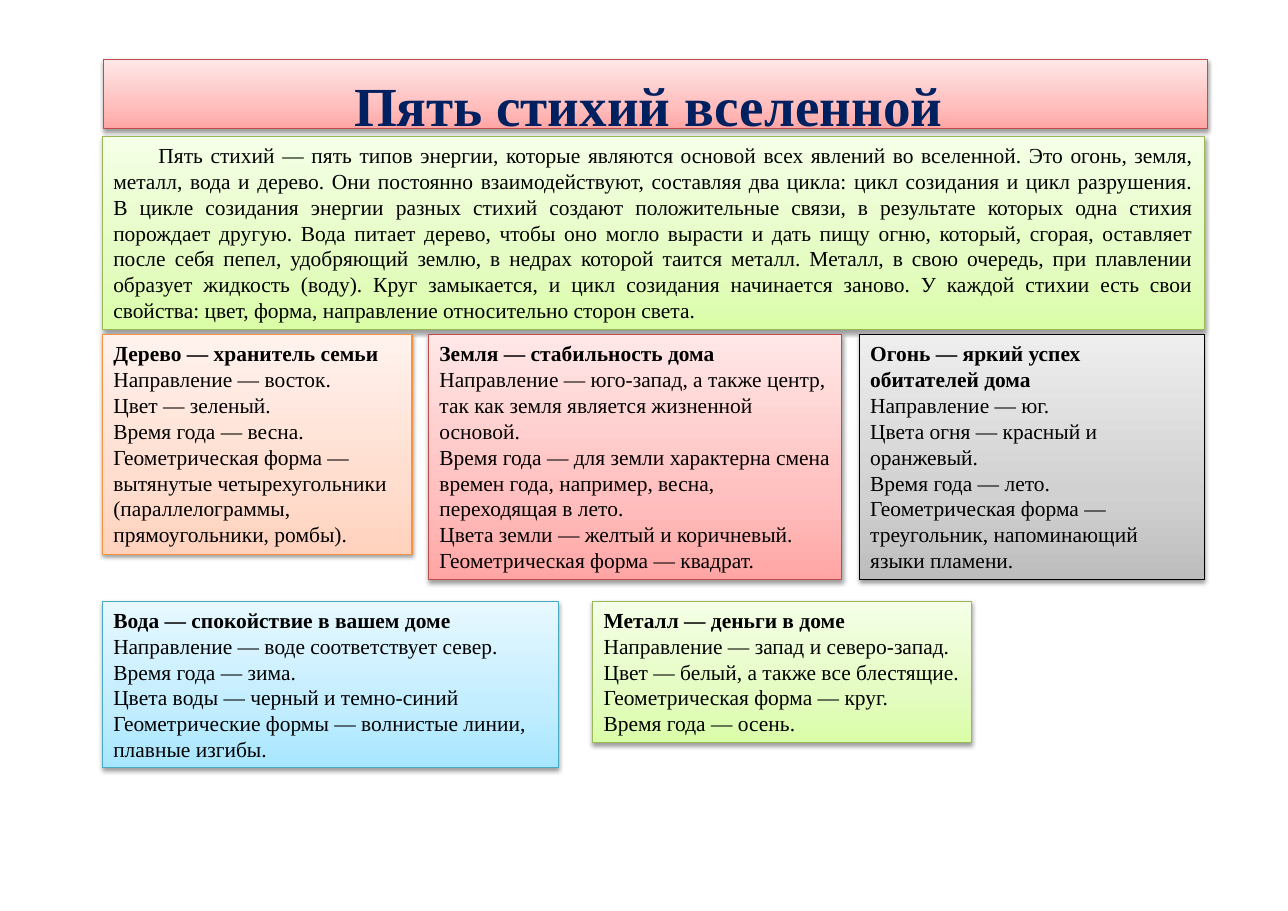
from copy import deepcopy

from lxml import etree
from pptx import Presentation
from pptx import util as u
from pptx.dml.color import RGBColor
from pptx.enum import shapes, text
from pptx.oxml.ns import qn

# Grid: square cells of 0.1 inch, counted from the content's top left corner
SLIDE_W, SLIDE_H = 11.69, 8.27
LEFT, TOP, CELL = 0.93, 0.54, 0.1
FONT = "Times New Roman"
STOPS = (0, 0.35, 1)

COLORS = {"title": "002060", "text": "000000", "shadow": "000000"}
# Border, then gradient from bottom to top
PANELS = {
    "red": ("BF4C48", "FFA6A5", "FFC0BF", "FFE7E7"),
    "green": ("98B955", "DAFDA7", "E4FCC2", "F5FFE7"),
    "blue": ("46AAC5", "A7E6FF", "C1EDFF", "E7F8FF"),
    "orange": ("F69240", "FFD2BD", "FFDED0", "FFF2ED"),
    "gray": ("000000", "BDBDBD", "D1D1D1", "EEEEEE"),
}

TITLE = "Пять стихий вселенной"
INTRO = (
    "Пять стихий — пять типов энергии, которые являются основой всех явлений "
    "во вселенной. Это огонь, земля, металл, вода и дерево. Они постоянно "
    "взаимодействуют, составляя два цикла: цикл созидания и цикл разрушения.\v"
    "В цикле созидания энергии разных стихий создают положительные связи, "
    "в результате которых одна стихия порождает другую. Вода питает дерево, "
    "чтобы оно могло вырасти и дать пищу огню, который, сгорая, оставляет "
    "после себя пепел, удобряющий землю, в недрах которой таится металл. "
    "Металл, в свою очередь, при плавлении образует жидкость (воду). Круг "
    "замыкается, и цикл созидания начинается заново. У каждой стихии есть "
    "свои свойства: цвет, форма, направление относительно сторон света."
)
# Colour, (column, row, columns, rows), heading, properties
ELEMENTS = [
    ("orange", (0, 25, 28.1, 19.9), "Дерево — хранитель семьи", [
        "Направление — восток.",
        "Цвет — зеленый.",
        "Время года — весна.",
        "Геометрическая форма — вытянутые четырехугольники "
        "(параллелограммы, прямоугольники, ромбы)."]),
    ("red", (29.6, 25, 37.5, 22.2), "Земля — стабильность дома", [
        "Направление — юго-запад, а также центр, так как земля является "
        "жизненной основой.",
        "Время года — для земли характерна смена времен года, например, "
        "весна, переходящая в лето.",
        "Цвета земли — желтый и коричневый.",
        "Геометрическая форма — квадрат."]),
    ("gray", (68.7, 25, 31.3, 22.2), "Огонь — яркий успех обитателей дома", [
        "Направление — юг.",
        "Цвета огня — красный и оранжевый.",
        "Время года — лето.",
        "Геометрическая форма — треугольник, напоминающий языки пламени."]),
    ("blue", (0, 49.2, 41.4, 15.1), "Вода — спокойствие в вашем доме", [
        "Направление — воде соответствует север.",
        "Время года — зима.",
        "Цвета воды — черный и темно-синий",
        "Геометрические формы — волнистые линии, плавные изгибы."]),
    ("green", (44.5, 49.2, 34.4, 12.8), "Металл — деньги в доме", [
        "Направление — запад и северо-запад.",
        "Цвет — белый, а также все блестящие.",
        "Геометрическая форма — круг.",
        "Время года — осень."]),
]


def add_shadow(panel):
    """Soft shadow falling straight down."""
    panel.shadow.inherit = False
    effects = panel._element.spPr.find(qn("a:effectLst"))
    outer = etree.SubElement(
        effects, qn("a:outerShdw"), blurRad=str(u.Pt(3.1)),
        dist=str(u.Pt(1.6)), dir="5400000", rotWithShape="0")
    color = etree.SubElement(outer, qn("a:srgbClr"), val=COLORS["shadow"])
    etree.SubElement(color, qn("a:alpha"), val="38000")


def add_panel(slide, palette, cells, insets=(0.1, 0.05, 0.09, 0.05)):
    """Rectangle on the grid with a gradient; returns its text frame."""
    col, row, cols, rows = cells
    panel = slide.shapes.add_shape(
        shapes.MSO_SHAPE.RECTANGLE,
        u.Inches(LEFT + col * CELL), u.Inches(TOP + row * CELL),
        u.Inches(cols * CELL), u.Inches(rows * CELL))
    border, *gradient = PANELS[palette]
    panel.fill.gradient()
    panel.fill.gradient_angle = 90
    first_stop = panel._element.spPr.find(".//" + qn("a:gs"))
    first_stop.addnext(deepcopy(first_stop))
    for stop, position, color in zip(panel.fill.gradient_stops, STOPS, gradient):
        stop.position = position
        stop.color.rgb = RGBColor.from_string(color)
    panel.line.color.rgb = RGBColor.from_string(border)
    panel.line.width = u.Pt(0.75)
    add_shadow(panel)

    frame = panel.text_frame
    frame.word_wrap = True
    frame.vertical_anchor = text.MSO_ANCHOR.TOP
    (frame.margin_left, frame.margin_top,
     frame.margin_right, frame.margin_bottom) = map(u.Inches, insets)
    return frame


def write(frame, words, size=14, color="text", bold=False,
          align=text.PP_ALIGN.LEFT, spacing=u.Pt(16.9), indent=0):
    """Add one formatted paragraph, filling the empty first one if present."""
    last = frame.paragraphs[-1]
    paragraph = frame.add_paragraph() if last.runs else last
    paragraph.text = words
    paragraph.alignment = align
    paragraph.line_spacing = spacing
    if indent:
        paragraph._p.get_or_add_pPr().set("indent", str(u.Inches(indent)))
    for run in paragraph.runs:
        run.font.name = FONT
        run.font.size = u.Pt(size)
        run.font.bold = bold
        run.font.color.rgb = RGBColor.from_string(COLORS[color])


def main():
    prs = Presentation()
    prs.slide_width, prs.slide_height = u.Inches(SLIDE_W), u.Inches(SLIDE_H)
    slide = prs.slides.add_slide(prs.slide_layouts[6])

    # Title
    heading = add_panel(slide, "red", (0.1, 0, 100.2, 6.3), (0.11, 0.11, 0.24, 0))
    write(heading, TITLE, size=36, color="title", bold=True,
          align=text.PP_ALIGN.CENTER, spacing=1.0)

    # Introduction
    intro = add_panel(slide, "green", (0, 7, 100, 17.5), (0.1, 0.05, 0.1, 0.05))
    write(intro, INTRO, align=text.PP_ALIGN.JUSTIFY, indent=0.41)

    # Five elements
    for palette, cells, name, properties in ELEMENTS:
        card = add_panel(slide, palette, cells)
        write(card, name, bold=True)
        for line in properties:
            write(card, line)

    prs.save("out.pptx")


if __name__ == "__main__":
    main()
